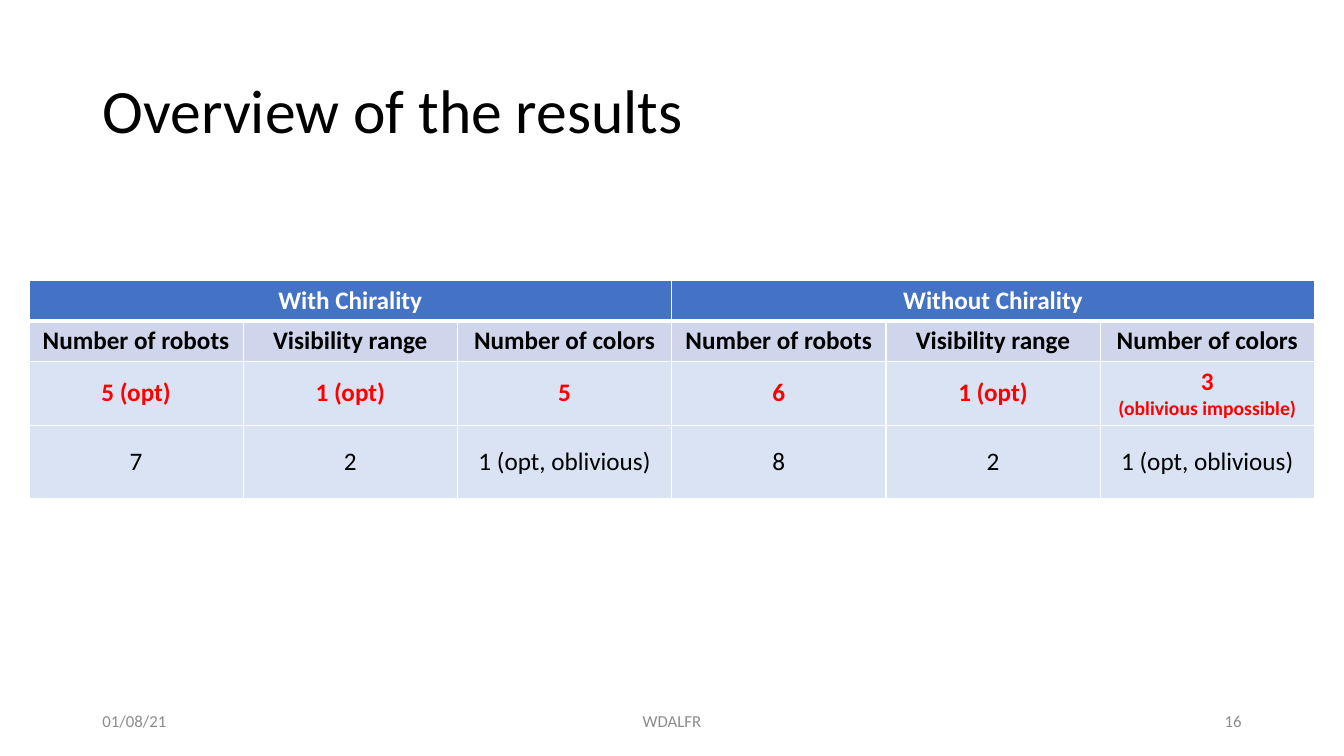
from lxml import etree
from pptx import Presentation
from pptx.dml.color import RGBColor
from pptx.enum.text import MSO_ANCHOR, MSO_AUTO_SIZE, PP_ALIGN
from pptx.oxml.ns import qn
from pptx.util import Cm, Pt

MIDDLE = MSO_ANCHOR.MIDDLE
NO_AUTOFIT = MSO_AUTO_SIZE.NONE
LEFT, CENTER, RIGHT = PP_ALIGN.LEFT, PP_ALIGN.CENTER, PP_ALIGN.RIGHT

FONT = "Calibri"
WHITE = RGBColor(0xFF, 0xFF, 0xFF)
BLACK = RGBColor(0x00, 0x00, 0x00)
RED = RGBColor(0xFF, 0x00, 0x00)
GRAY = RGBColor(0x8C, 0x8C, 0x8C)
HEADER_BLUE = RGBColor(0x44, 0x72, 0xC4)
SUBHEADER_BLUE = RGBColor(0xCF, 0xD5, 0xEA)
BODY_BLUE = RGBColor(0xDA, 0xE3, 0xF3)

TITLE_ONLY = 5
GROUPS = ["With Chirality", "Without Chirality"]
MEASURES = ["Number of robots", "Visibility range", "Number of colors"]
BEST_RESULTS = ["5 (opt)", "1 (opt)", "5", "6", "1 (opt)", "3\n(oblivious impossible)"]
OBLIVIOUS_RESULTS = ["7", "2", "1 (opt, oblivious)", "8", "2", "1 (opt, oblivious)"]
GROUP_HEADERS = [text for group in GROUPS for text in (group, "", "")]

TABLE_ROWS = [
    (0.99, GROUP_HEADERS, HEADER_BLUE, WHITE, True),
    (0.99, MEASURES * len(GROUPS), SUBHEADER_BLUE, BLACK, True),
    (1.57, BEST_RESULTS, BODY_BLUE, RED, True),
    (1.85, OBLIVIOUS_RESULTS, BODY_BLUE, BLACK, False),
]


def write_run(paragraph, text, size, color, alignment, bold=False):
    paragraph.alignment = alignment
    run = paragraph.add_run()
    run.text = text
    run.font.name = FONT
    run.font.size = Pt(size)
    run.font.bold = bold
    run.font.color.rgb = color


def add_title(slide, left, top, width, height):
    title = slide.shapes.title
    title.left, title.top = Cm(left), Cm(top)
    title.width, title.height = Cm(width), Cm(height)
    frame = title.text_frame
    frame.auto_size = NO_AUTOFIT
    frame.vertical_anchor = MIDDLE
    paragraph = frame.paragraphs[0]
    paragraph.line_spacing = 0.9
    write_run(paragraph, "Overview of the results", 44, BLACK, LEFT)


def add_footer(slide, left, top, width, height):
    side_width, center_width = 7.62, 11.43
    parts = [
        ("01/08/21", left, side_width, LEFT),
        ("WDALFR", left + (width - center_width) / 2, center_width, CENTER),
        ("16", left + width - side_width, side_width, RIGHT),
    ]
    for text, part_left, part_width, alignment in parts:
        box = slide.shapes.add_textbox(Cm(part_left), Cm(top), Cm(part_width), Cm(height))
        frame = box.text_frame
        frame.word_wrap = True
        frame.vertical_anchor = MIDDLE
        write_run(frame.paragraphs[0], text, 12, GRAY, alignment)


def set_borders(cell, top_width, bottom_width):
    properties = cell._tc.get_or_add_tcPr()
    widths = {"a:lnL": 1, "a:lnR": 1, "a:lnT": top_width, "a:lnB": bottom_width}
    for tag, width in widths.items():
        line = etree.SubElement(properties, qn(tag), w=str(Pt(width)))
        fill = etree.SubElement(line, qn("a:solidFill"))
        etree.SubElement(fill, qn("a:srgbClr"), val=str(WHITE))


def fill_cell(cell, text, fill_color, text_color, bold):
    cell.vertical_anchor = MIDDLE
    cell.fill.solid()
    cell.fill.fore_color.rgb = fill_color
    if not text:
        return
    frame = cell.text_frame
    for index, line in enumerate(text.split("\n")):
        paragraph = frame.add_paragraph() if index else frame.paragraphs[0]
        write_run(paragraph, line, 14 if index else 18, text_color, CENTER, bold)


def add_results_table(slide, left, top, width):
    column_count = len(GROUP_HEADERS)
    height = sum(row[0] for row in TABLE_ROWS)
    table = slide.shapes.add_table(
        len(TABLE_ROWS), column_count, Cm(left), Cm(top), Cm(width), Cm(height)
    ).table
    for column in table.columns:
        column.width = Cm(width / column_count)
    for row_index, (row_height, texts, fill_color, text_color, bold) in enumerate(TABLE_ROWS):
        table.rows[row_index].height = Cm(row_height)
        for column_index, text in enumerate(texts):
            cell = table.cell(row_index, column_index)
            set_borders(cell, 3 if row_index == 1 else 1, 3 if row_index == 0 else 1)
            fill_cell(cell, text, fill_color, text_color, bold)
    span = len(MEASURES)
    for first in range(0, column_count, span):
        table.cell(0, first).merge(table.cell(0, first + span - 1))


def main():
    presentation = Presentation()
    presentation.slide_width = Cm(33.87)
    presentation.slide_height = Cm(19.05)
    slide = presentation.slides.add_slide(presentation.slide_layouts[TITLE_ONLY])
    add_title(slide, 2.33, 1.01, 29.21, 3.68)
    add_footer(slide, 2.33, 17.66, 29.21, 1.01)
    add_results_table(slide, 0.73, 7.07, 32.4)
    presentation.save("out.pptx")


if __name__ == "__main__":
    main()
